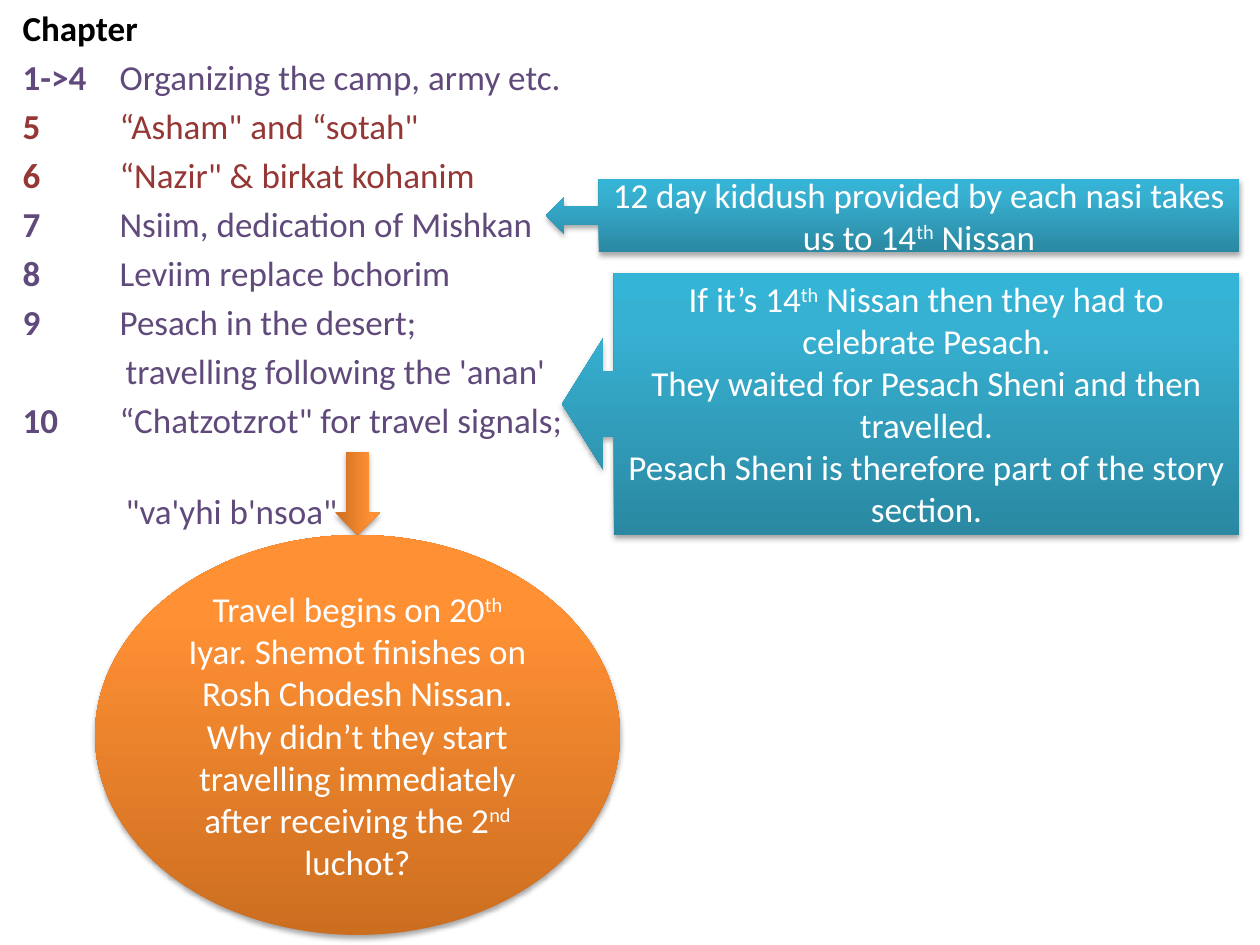
from copy import deepcopy

from lxml import etree
from pptx import Presentation, util as u
from pptx.dml.color import RGBColor
from pptx.enum import shapes, text
from pptx.oxml import ns

PX = 914400 / 126
FONT = "Calibri"
BLACK = RGBColor(0x00, 0x00, 0x00)
WHITE = RGBColor(0xFF, 0xFF, 0xFF)
PURPLE = RGBColor(0x60, 0x4A, 0x7B)
RED = RGBColor(0x95, 0x37, 0x35)
ORANGE = [(0, RGBColor(0xCC, 0x6E, 0x20)), (0.8, RGBColor(0xFF, 0x90, 0x34)),
          (1, RGBColor(0xFF, 0x91, 0x36))]
TEAL = [(0, RGBColor(0x2A, 0x88, 0xA2)), (0.8, RGBColor(0x37, 0xB1, 0xD2)),
        (1, RGBColor(0x34, 0xB4, 0xD6))]
ROW_GAP = 4
SECTION_GAP = 28
TOPIC_COLUMN = 97
CONTINUED_COLUMN = 103

CHAPTERS = [
    ("Chapter", "", BLACK, ROW_GAP),
    ("1->4", "Organizing the camp, army etc.", PURPLE, ROW_GAP),
    ("5", "“Asham\" and “sotah\"", RED, ROW_GAP),
    ("6", "“Nazir\" & birkat kohanim", RED, ROW_GAP),
    ("7", "Nsiim, dedication of Mishkan", PURPLE, ROW_GAP),
    ("8", "Leviim replace bchorim", PURPLE, ROW_GAP),
    ("9", "Pesach in the desert;", PURPLE, ROW_GAP),
    ("", "travelling following the 'anan'", PURPLE, ROW_GAP),
    ("10", "“Chatzotzrot\" for travel signals;", PURPLE, ROW_GAP),
    ("", "\"va'yhi b'nsoa\"", PURPLE, SECTION_GAP),
]
TRAVEL = [
    ["Travel begins on 20", "th", " Iyar. Shemot finishes on Rosh Chodesh Nissan."],
    ["Why didn’t they start travelling immediately after receiving the 2", "nd", " luchot?"],
]
KIDDUSH = [["12 day kiddush provided by each nasi takes us to 14", "th", " Nissan"]]
PESACH = [
    ["If it’s 14", "th", " Nissan then they had to celebrate Pesach."],
    ["They waited for Pesach Sheni and then travelled."],
    ["Pesach Sheni is therefore part of the story section."],
]


def emu(*lengths):
    """Turn px lengths into EMU."""
    return [u.Emu(round(length * PX)) for length in lengths]


def add_span(para, words, color, bold=False):
    """Add one formatted run to a paragraph."""
    span = para.add_run()
    span.text = words
    span.font.name = FONT
    span.font.size = u.Pt(20)
    span.font.bold = bold
    span.font.color.rgb = color
    return span


def indent_row(para, left, first):
    """Set a bulletless row with its left margin and first-line indent."""
    margin, indent = emu(left, first)
    properties = para._p.get_or_add_pPr()
    properties.set("marL", str(margin))
    properties.set("indent", str(indent))
    etree.SubElement(properties, ns.qn("a:buNone"))


def chapter_list(page, box):
    """Fill the body placeholder with the chapter rows."""
    body = page.placeholders[1]
    body.left, body.top, body.width, body.height = emu(*box)
    frame = body.text_frame
    frame.auto_size = text.MSO_AUTO_SIZE.NONE
    for index, (number, topic, color, gap) in enumerate(CHAPTERS):
        para = frame.add_paragraph() if index else frame.paragraphs[0]
        para.space_before = u.Pt(gap)
        if number:
            indent_row(para, TOPIC_COLUMN, -TOPIC_COLUMN)
            add_span(para, number + ("\t" if topic else ""), color, bold=True)
        else:
            indent_row(para, CONTINUED_COLUMN, 0)
        if topic:
            add_span(para, topic, color)


def add_shadow(shape):
    """Give a shape a soft shadow straight below it."""
    effects = etree.SubElement(shape._element.spPr, ns.qn("a:effectLst"))
    shadow = etree.SubElement(effects, ns.qn("a:outerShdw"), blurRad=str(u.Pt(3.1)),
                              dist=str(u.Pt(1.8)), dir="5400000", rotWithShape="0")
    color = etree.SubElement(shadow, ns.qn("a:srgbClr"), val="000000")
    etree.SubElement(color, ns.qn("a:alpha"), val="35000")


def glossy_shape(page, kind, box, gradient, lines=(), adjustments=(), rotation=0):
    """Draw a gradient shape with centred lines of text."""
    shape = page.shapes.add_shape(kind, *emu(*box))
    shape.rotation = rotation
    for index, value in enumerate(adjustments):
        shape.adjustments[index] = value
    shape.fill.gradient()
    shape.fill.gradient_angle = 90
    stop_list = shape._element.spPr.find(".//" + ns.qn("a:gsLst"))
    stop_list.insert(1, deepcopy(stop_list[0]))
    for stop, (position, color) in zip(shape.fill.gradient_stops, gradient):
        stop.position = position
        stop.color.rgb = color
    shape.line.fill.background()
    add_shadow(shape)
    frame = shape.text_frame
    frame.word_wrap = True
    frame.vertical_anchor = text.MSO_ANCHOR.MIDDLE
    for index, pieces in enumerate(lines):
        para = frame.add_paragraph() if index else frame.paragraphs[0]
        para.alignment = text.PP_ALIGN.CENTER
        for piece in pieces:
            span = add_span(para, piece, WHITE)
            if piece in ("th", "nd"):
                span.font._element.set("baseline", "30000")


def travel_question(page, box):
    """Draw the question oval with the arrow that drops onto its top."""
    left, top, width, height = box
    long_side, short_side = 83, 45
    arrow = (left + (width - long_side) / 2, top - (long_side + short_side) / 2,
             long_side, short_side)
    glossy_shape(page, shapes.MSO_SHAPE.RIGHT_ARROW, arrow, ORANGE, rotation=90)
    glossy_shape(page, shapes.MSO_SHAPE.OVAL, box, ORANGE, TRAVEL)


def callout(page, box, lines, head, panel):
    """Draw a teal left callout with the given head length and panel width."""
    left, top, width, height = box
    glossy_shape(page, shapes.MSO_SHAPE.LEFT_ARROW_CALLOUT, box, TEAL, lines,
                 (0.25, 0.25, head / height, panel / width))


def main():
    """Build the deck."""
    deck = Presentation()
    deck.slide_width, deck.slide_height = emu(1260, 945)
    page = deck.slides.add_slide(deck.slide_layouts[1])
    title = page.shapes.title._element
    title.getparent().remove(title)
    chapter_list(page, (10, 0, 577, 892))
    travel_question(page, (95, 535, 525, 400))
    callout(page, (546, 179, 693, 73), KIDDUSH, 18, 640)
    callout(page, (562, 273, 677, 262), PESACH, 41, 625)
    deck.save("out.pptx")


if __name__ == "__main__":
    main()
